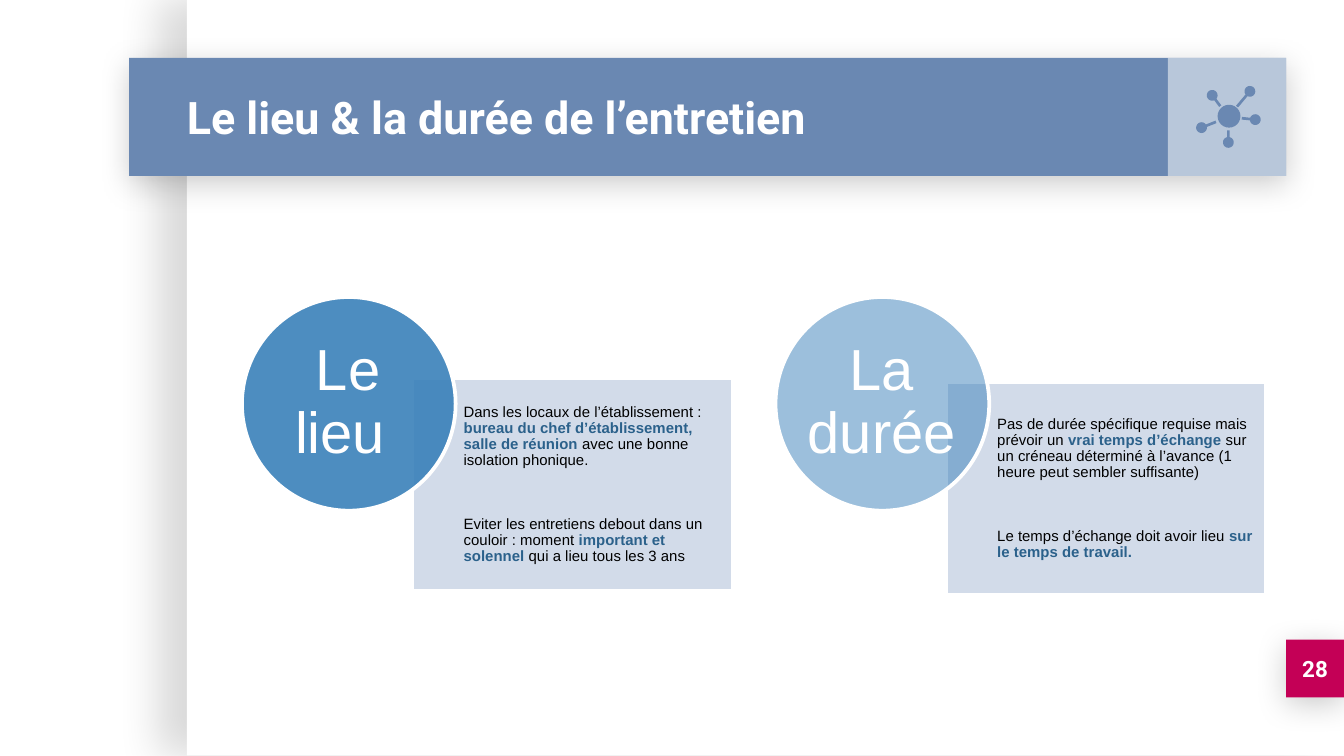
from dataclasses import dataclass
from math import atan2, cos, pi, sin

from lxml.etree import SubElement
from pptx import Presentation
from pptx.dml.color import RGBColor as RGB
from pptx.enum.shapes import MSO_SHAPE as SHAPE
from pptx.enum.text import MSO_ANCHOR as ANCHOR, MSO_AUTO_SIZE as AUTO, PP_ALIGN as ALIGN
from pptx.oxml.ns import qn
from pptx.util import Inches, Pt


@dataclass
class Theme:
    white: str = "FFFFFF"
    black: str = "000000"
    banner: str = "6A88B2"
    badge: str = "C40056"
    card: str = "CED8E7"
    circle: str = "3A81BA"
    accent: str = "2B618B"
    title: int = 24
    number: int = 12
    label: int = 31
    body: int = 8


T = Theme()


def style(sp, fill, alpha=100, line=None, shadow=None):
    sp.shadow.inherit = False
    sp.fill.solid()
    sp.fill.fore_color.rgb = RGB.from_string(fill)
    props = sp._element.spPr
    if alpha < 100:
        color = props.find(qn("a:solidFill")).find(qn("a:srgbClr"))
        SubElement(color, qn("a:alpha"), val=str(alpha * 1000))
    if line:
        sp.line.color.rgb = RGB.from_string(line)
        sp.line.width = Pt(2)
    else:
        sp.line.fill.background()
    if shadow:
        opacity, blur, dist, angle = shadow
        outer = SubElement(props.find(qn("a:effectLst")), qn("a:outerShdw"), blurRad=str(Pt(blur)),
                           dist=str(Pt(dist)), dir=str(angle * 60000), algn="bl", rotWithShape="0")
        color = SubElement(outer, qn("a:srgbClr"), val=T.black)
        SubElement(color, qn("a:alpha"), val=str(opacity * 1000))


def write(sp, paragraphs, size, font="Arial", inset=(0, 0, 0, 0), bold=False, color=T.white, **para):
    tf = sp.text_frame
    sides = ("margin_left", "margin_top", "margin_right", "margin_bottom")
    frame = {"word_wrap": True, "auto_size": AUTO.NONE, "vertical_anchor": ANCHOR.MIDDLE}
    frame.update(zip(sides, map(Inches, inset)))
    for name, value in frame.items():
        setattr(tf, name, value)
    for i, runs in enumerate(paragraphs):
        p = tf.add_paragraph() if i else tf.paragraphs[0]
        for name, value in para.items():
            if i or name != "space_before":
                setattr(p, name, value)
        for text, strong in runs:
            r = p.add_run()
            r.text = text
            for name, value in {"name": font, "size": Pt(size), "bold": bold or strong}.items():
                setattr(r.font, name, value)
            r.font.color.rgb = RGB.from_string(T.accent if strong else color)


prs = Presentation()
prs.slide_width = Inches(10)
prs.slide_height = Inches(10) * 9 // 16
s = prs.slides.add_slide(prs.slide_layouts[5])

drop = (20, 16.9, 3.8, 90)
for box, look in [
    ((1.39, 0, 8.61, 5.62), {"fill": T.white, "shadow": (15, 22.5, 15, 180)}),
    ((9.57, 4.76, 0.43, 0.43), {"fill": T.badge, "shadow": drop}),
    ((0.96, 0.43, 8.61, 0.88), {"fill": T.banner, "shadow": drop}),
    ((8.69, 0.43, 0.88, 0.88), {"fill": T.white, "alpha": 53}),
]:
    style(s.shapes.add_shape(SHAPE.RECTANGLE, *map(Inches, box)), **look)

title = s.shapes.title
title._element.getparent().append(title._element)
title.left, title.top, title.width, title.height = map(Inches, (1.29, 0.43, 7.37, 0.88))
heading = {"font": "Roboto", "inset": (0.1,) * 4, "bold": True}
write(title, [[("Le lieu & la durée de l’entretien", False)]], T.title, alignment=ALIGN.LEFT, **heading)
number = s.shapes.add_textbox(*map(Inches, (9.57, 4.76, 0.43, 0.43)))
write(number, [[("28", False)]], T.number, alignment=ALIGN.CENTER, **heading)

hub_x, hub_y, hub_r, node_r, half, steps = 9.14, 0.87, 0.08, 0.04, 0.01, 24
for x, y in [(9.3, 0.68), (9.02, 0.71), (8.94, 0.95), (9.14, 1.06), (9.34, 0.89)]:
    angle = atan2(hub_y - y, hub_x - x)
    ux, uy = cos(angle), sin(angle)
    end_x, end_y = hub_x - ux * (hub_r + 0.02), hub_y - uy * (hub_r + 0.02)
    points = [(end_x - uy * half, end_y + ux * half)]
    for i in range(steps + 1):
        a = angle + 0.25 + i * (2 * pi - 0.5) / steps
        points.append((x + node_r * cos(a), y + node_r * sin(a)))
    points.append((end_x + uy * half, end_y - ux * half))
    points = [(Inches(px), Inches(py)) for px, py in points]
    spoke = s.shapes.build_freeform(*points[0])
    spoke.add_line_segments(points[1:], close=True)
    style(spoke.convert_to_shape(), T.banner)
hub = s.shapes.add_shape(SHAPE.OVAL, *map(Inches, (9.06, 0.78, 0.17, 0.17)))
style(hub, T.banner)

topics = [
    ("Le lieu ", 1.8, 2.81, 90, [
        [("Dans les locaux de l’établissement : ", False),
         ("bureau du chef d’établissement, salle de réunion ", True),
         ("avec une bonne isolation phonique.", False)],
        [("Eviter les entretiens debout dans un couloir : moment ", False),
         ("important et solennel ", True),
         ("qui a lieu tous les 3 ans", False)],
    ]),
    ("La durée ", 5.77, 2.84, 50, [
        [("Pas de durée spécifique requise mais prévoir un ", False),
         ("vrai temps d’échange ", True),
         ("sur un créneau déterminé à l’avance (1 heure peut sembler suffisante)", False)],
        [("Le temps d’échange doit avoir lieu ", False),
         ("sur le temps de travail.", True)],
    ]),
]
for label, left, top, alpha, details in topics:
    card = s.shapes.add_shape(SHAPE.RECTANGLE, *map(Inches, (left + 1.27, top, 2.38, 1.59)))
    style(card, T.card, 90, T.white)
    body = s.shapes.add_textbox(*map(Inches, (left + 1.65, top, 2, 1.59)))
    write(body, details, T.body, inset=(0, 0.06, 0.06, 0.06), color=T.black,
          line_spacing=0.9, space_before=Pt(25.5))
    circle = s.shapes.add_shape(SHAPE.OVAL, *map(Inches, (left, 2.21, 1.59, 1.59)))
    style(circle, T.circle, alpha, T.white)
    name = s.shapes.add_textbox(*map(Inches, (left + 0.23, 2.44, 1.12, 1.12)))
    write(name, [[(label, False)]], T.label, alignment=ALIGN.CENTER, line_spacing=0.9)

prs.save("out.pptx")
